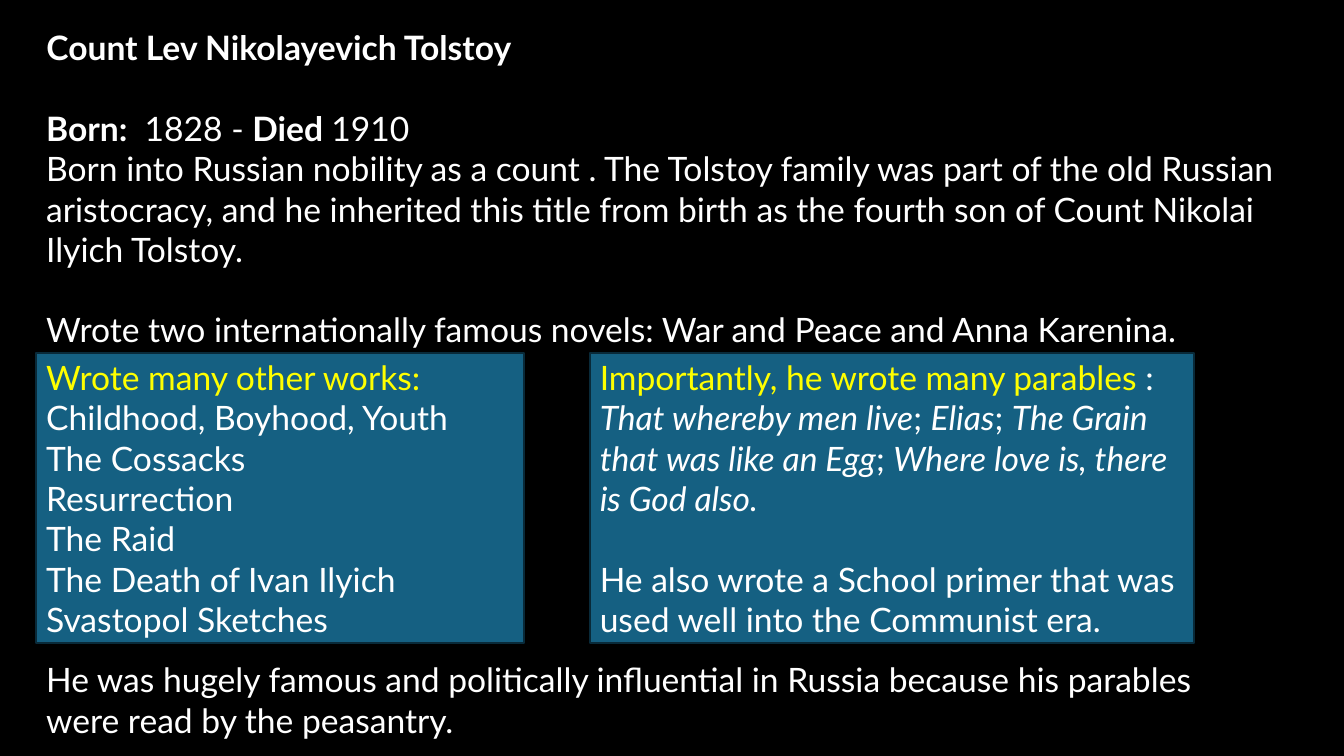
"""Build a slide on the life and works of Count Lev Nikolayevich Tolstoy."""
from pptx import Presentation
from pptx.dml.color import RGBColor
from pptx.enum.shapes import MSO_SHAPE
from pptx.enum.text import MSO_ANCHOR, MSO_AUTO_SIZE, PP_ALIGN
from pptx.util import Inches, Pt

WHITE, YELLOW, BLUE, NAVY, BLACK = "FFFFFF", "FFFF00", "156082", "092A39", "000000"
LEFT = 0.36
LINE_GAP = 28.8


def color(value):
    return RGBColor.from_string(value)


def write(frame, paragraphs, anchor=MSO_ANCHOR.TOP):
    frame.word_wrap = True
    frame.auto_size = MSO_AUTO_SIZE.NONE
    frame.vertical_anchor = anchor
    for index, (gap, pieces) in enumerate(paragraphs):
        para = frame.paragraphs[0] if index == 0 else frame.add_paragraph()
        para.alignment = PP_ALIGN.LEFT
        para.line_spacing = 1.0
        para.space_before = Pt(gap)
        for text, style, shade in pieces:
            span = para.add_run()
            span.text = text
            span.font.name = "Lato"
            span.font.size = Pt(24)
            span.font.bold = style == "bold"
            span.font.italic = style == "italic"
            span.font.color.rgb = color(shade)


deck = Presentation()
deck.slide_width, deck.slide_height = Inches(13.33), Inches(7.5)
page = deck.slides.add_slide(deck.slide_layouts[5])
page.background.fill.solid()
page.background.fill.fore_color.rgb = color(BLACK)

title = page.shapes.title
title.left, title.top = Inches(LEFT), Inches(0.22)
title.width, title.height = Inches(12.77), Inches(0.5)
write(title.text_frame, [(0, [("Count Lev Nikolayevich Tolstoy", "bold", WHITE)])])

life = [
    (0, [("Born:", "bold", WHITE), ("  1828 - ", "", WHITE),
         ("Died ", "bold", WHITE), ("1910", "", WHITE)]),
    (0, [("Born into Russian nobility as a count . The Tolstoy family was part of the old "
          "Russian aristocracy, and he inherited this title from birth as the fourth son of "
          "Count Nikolai Ilyich Tolstoy.", "", WHITE)]),
    (LINE_GAP, [("Wrote two internationally famous novels: War and Peace and Anna Karenina.",
                 "", WHITE)]),
]
influence = [
    (0, [("He was hugely famous and politically influential in Russia because his parables "
          "were read by the peasantry.", "", WHITE)]),
]
for top, width, height, paragraphs in [(1.02, 12.77, 2.48, life), (6.49, 12.34, 0.91, influence)]:
    box = page.shapes.add_textbox(Inches(LEFT), Inches(top), Inches(width), Inches(height))
    write(box.text_frame, paragraphs)

titles = ["Childhood, Boyhood, Youth", "The Cossacks", "Resurrection", "The Raid",
          "The Death of Ivan Ilyich", "Svastopol Sketches"]
works = [(0, [("Wrote many other works:", "", YELLOW)])]
works += [(0, [(name, "", WHITE)]) for name in titles]
parables = [
    (0, [("Importantly, he wrote many parables ", "", YELLOW), (":", "", WHITE)]),
    (0, [("That whereby men live", "italic", WHITE), ("; ", "", WHITE),
         ("Elias", "italic", WHITE), ("; ", "", WHITE),
         ("The Grain that was like an Egg", "italic", WHITE), ("; ", "", WHITE),
         ("Where love is, there is God also.", "italic", WHITE)]),
    (LINE_GAP, [("He also wrote a School primer that was used well into the Communist era.",
                 "", WHITE)]),
]
for left, width, paragraphs in [(LEFT, 4.84, works), (5.85, 5.99, parables)]:
    panel = page.shapes.add_shape(MSO_SHAPE.RECTANGLE, Inches(left), Inches(3.5),
                                  Inches(width), Inches(2.88))
    panel.shadow.inherit = False
    panel.fill.solid()
    panel.fill.fore_color.rgb = color(BLUE)
    panel.line.color.rgb = color(NAVY)
    panel.line.width = Pt(1.5)
    write(panel.text_frame, paragraphs, MSO_ANCHOR.MIDDLE)

deck.save("out.pptx")
